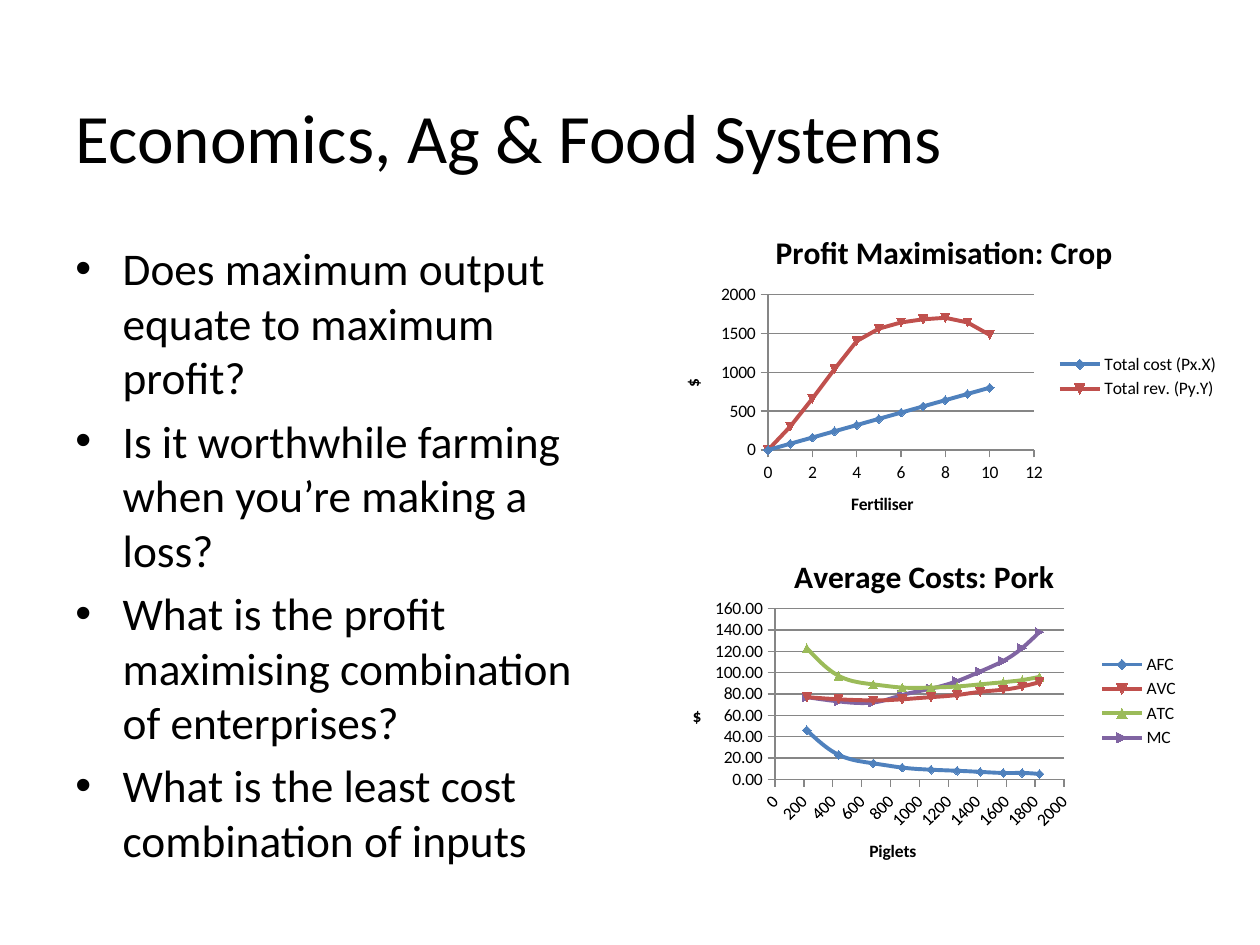
from dataclasses import dataclass

import pptx
import pptx.chart.data
import pptx.dml.color
import pptx.enum.chart
import pptx.enum.text
import pptx.oxml
import pptx.oxml.ns
import pptx.util
from pptx.util import Pt


@dataclass(frozen=True)
class Theme:
    font: str = "Calibri"
    bullet_font: str = "Arial"
    ink: str = "000000"
    rule: str = "868686"
    series: tuple = ("4F81BD", "C0504D", "9BBB59", "8064A2")
    title: float = 39.6
    body: float = 25.9
    chart_title: float = 18
    chart_text: float = 10


THEME = Theme()

QUESTIONS = (
    "Does maximum output equate to maximum profit?",
    "Is it worthwhile farming when you’re making a loss?",
    "What is the profit maximising combination of enterprises?",
    "What is the least cost combination of inputs",
)

FERTILISER = range(11)
CROP = {
    "Total cost (Px.X)": [80 * units for units in FERTILISER],
    "Total rev. (Py.Y)": [0, 300, 660, 1040, 1400, 1560, 1640, 1680, 1700, 1640, 1480],
}

# Average costs are undefined when no piglets are produced.
PIGLETS = (0, 220, 440, 680, 880, 1080, 1260, 1420, 1580, 1710, 1830)
PORK = {
    "AFC": (None, 46, 23, 15, 11, 9, 8, 7, 6, 6, 5),
    "AVC": (None, 77, 75, 74, 75, 77, 79, 82, 84, 87, 91),
    "ATC": (None, 123, 97, 89, 86, 86, 87, 89, 91, 93, 96),
    "MC": (None, 77, 73, 72, 79, 85, 92, 101, 111, 123, 138),
}


def rgb(value):
    return pptx.dml.color.RGBColor.from_string(value)


def style_font(font, size, bold=False):
    font.name = THEME.font
    font.size = Pt(size)
    font.bold = bold
    font.color.rgb = rgb(THEME.ink)


def add_title(slide, text, left, top, width, height):
    title = slide.shapes.title
    title.left, title.top, title.width, title.height = map(Pt, (left, top, width, height))
    frame = title.text_frame
    frame.text = text
    frame.vertical_anchor = pptx.enum.text.MSO_ANCHOR.MIDDLE
    frame.paragraphs[0].alignment = pptx.enum.text.PP_ALIGN.LEFT
    style_font(frame.paragraphs[0].runs[0].font, THEME.title)


def add_bullets(slide, lines, left, top, width, height):
    frame = slide.shapes.add_textbox(*map(Pt, (left, top, width, height))).text_frame
    frame.word_wrap = True
    frame.text = "\n".join(lines)
    namespace = pptx.oxml.ns.nsdecls("a")
    for position, paragraph in enumerate(frame.paragraphs):
        properties = paragraph._p.get_or_add_pPr()
        properties.set("marL", str(Pt(27)))
        properties.set("indent", str(Pt(-27)))
        for bullet in (f'buFont {namespace} typeface="{THEME.bullet_font}"',
                       f'buChar {namespace} char="•"'):
            properties.append(pptx.oxml.parse_xml(f"<a:{bullet}/>"))
        paragraph.space_before = Pt(5.2 if position else 0)
        style_font(paragraph.runs[0].font, THEME.body)


def place(element, index, size, x, y, *extent):
    """Position a chart part by points measured from the chart's corner."""
    for old in element.findall(pptx.oxml.ns.qn("c:layout")):
        element.remove(old)
    target = '<c:layoutTarget val="inner"/>' if extent else ""
    modes = "".join(f'<c:{side}Mode val="edge"/>' for side in "xy")
    values = "".join(f'<c:{key} val="{points / whole}"/>'
                     for key, points, whole in zip("xywh", (x, y, *extent), size * 2))
    element.insert(index, pptx.oxml.parse_xml(
        f'<c:layout {pptx.oxml.ns.nsdecls("c")}><c:manualLayout>'
        f'{target}{modes}{values}</c:manualLayout></c:layout>'))


def set_heading(heading, text, font_size, chart_size, position):
    heading.text_frame.text = text
    style_font(heading.text_frame.paragraphs[0].runs[0].font, font_size, bold=True)
    place(heading._element, 1, chart_size, *position)


def format_axis(axis, chart_size, text, position, maximum, step, number_format):
    axis.minimum_scale, axis.maximum_scale, axis.major_unit = 0, maximum, step
    axis.major_tick_mark = pptx.enum.chart.XL_TICK_MARK.OUTSIDE
    axis.has_major_gridlines = False
    axis.format.line.color.rgb = rgb(THEME.rule)
    axis.tick_labels.number_format = number_format
    axis.tick_labels.number_format_is_linked = False
    style_font(axis.tick_labels.font, THEME.chart_text)
    set_heading(axis.axis_title, text, THEME.chart_text, chart_size, position)


def add_scatter(slide, kind, box, x_values, curves, heading, plot, x_axis, y_axis):
    data = pptx.chart.data.XyChartData()
    for name, y_values in curves.items():
        series = data.add_series(name)
        for x, y in zip(x_values, y_values):
            series.add_data_point(x, y)
    chart = slide.shapes.add_chart(kind, *map(Pt, box), data).chart
    size = box[2:]
    style_font(chart.font, THEME.chart_text)

    chart.has_title = True
    set_heading(chart.chart_title, heading[0], THEME.chart_title, size, heading[1])
    chart.has_legend = True
    chart.legend.position = pptx.enum.chart.XL_LEGEND_POSITION.RIGHT
    chart.legend.include_in_layout = False
    style_font(chart.legend.font, THEME.chart_text)

    format_axis(chart.category_axis, size, *x_axis)
    format_axis(chart.value_axis, size, *y_axis)
    chart.value_axis.has_major_gridlines = True
    chart.value_axis.major_gridlines.format.line.color.rgb = rgb(THEME.rule)
    place(chart._chartSpace.chart.plotArea, 0, size, *plot)

    smooth = kind == pptx.enum.chart.XL_CHART_TYPE.XY_SCATTER_SMOOTH
    chart.plots[0].vary_by_categories = False
    for series, color in zip(chart.plots[0].series, THEME.series):
        series._element.get_or_add_smooth().val = smooth
        series.format.line.color.rgb = rgb(color)
        series.format.line.width = Pt(2.25)
    return chart


def turn(text_body, degrees):
    text_body.find(pptx.oxml.ns.qn("a:bodyPr")).set("rot", str(degrees * 60000))


def main():
    presentation = pptx.Presentation()
    presentation.slide_width, presentation.slide_height = Pt(720), Pt(540)
    slide = presentation.slides.add_slide(presentation.slide_layouts[5])
    add_title(slide, "Economics, Ag & Food Systems", 36, 32.4, 517, 90)
    add_bullets(slide, QUESTIONS, 36, 134, 318, 348.5)

    chart_types = pptx.enum.chart.XL_CHART_TYPE
    crop = add_scatter(
        slide, chart_types.XY_SCATTER_LINES, (375, 122.4, 329, 185.8), FERTILISER, CROP,
        heading=("Profit Maximisation: Crop", (65, 6)),
        plot=(63.9, 45.9, 152, 88.9),
        x_axis=("Fertiliser", (109.5, 157), 12, 2, "General"),
        y_axis=("$", (12.5, 92.3), 2000, 500, "General"))
    pork = add_scatter(
        slide, chart_types.XY_SCATTER_SMOOTH, (375, 308.2, 306, 187.2), PIGLETS, PORK,
        heading=("Average Costs: Pork", (75.6, 6)),
        plot=(67.9, 40.1, 165.2, 98.8),
        x_axis=("Piglets", (120, 172.2), 2000, 200, "General"),
        y_axis=("$", (18.9, 93.8), 160, 20, "0.00"))
    turn(crop.value_axis.axis_title.text_frame._txBody, -90)
    turn(pork.value_axis.axis_title.text_frame._txBody, 0)
    turn(pork.category_axis._element.find(pptx.oxml.ns.qn("c:txPr")), -45)

    presentation.save("out.pptx")


if __name__ == "__main__":
    main()
